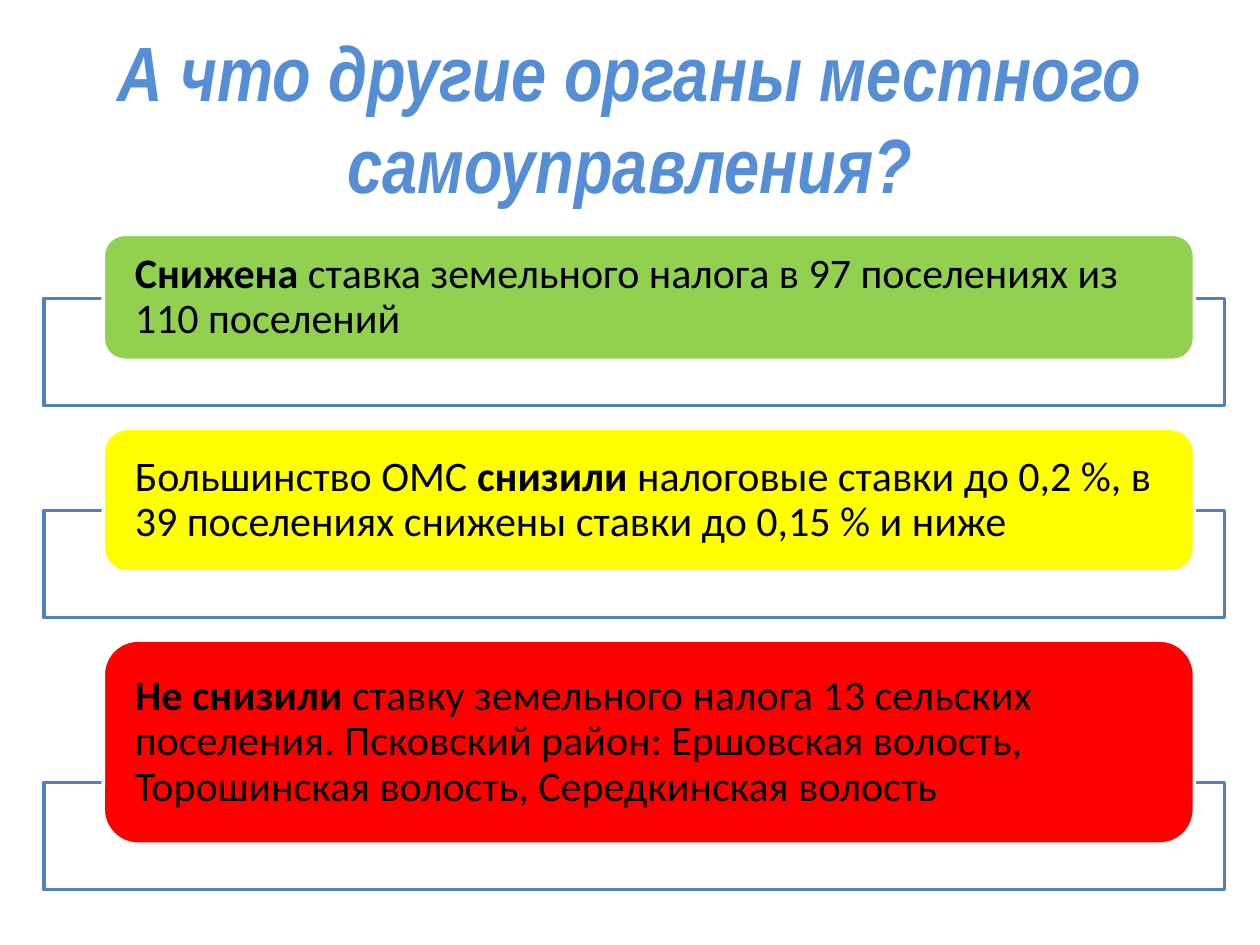
from dataclasses import dataclass

from pptx import Presentation
from pptx.dml.color import RGBColor
from pptx.enum.shapes import MSO_SHAPE as Shape
from pptx.enum.text import MSO_ANCHOR as Anchor, PP_ALIGN as Align
from pptx.util import Inches, Pt

TITLE = "А что другие органы местного самоуправления?"

# Each card: fill colour, height in inches, runs of (text, bold)
CARDS = [
    ("92D050", 1.0, [
        ("Снижена ", True),
        ("ставка земельного налога в 97 поселениях из 110 поселений", False),
    ]),
    ("FFFF00", 1.14, [
        ("Большинство ОМС ", False),
        ("снизили ", True),
        ("налоговые ставки до 0,2 %, в 39 поселениях снижены ставки до 0,15 % и ниже", False),
    ]),
    ("FF0000", 1.62, [
        ("Не снизили ", True),
        ("ставку земельного налога 13 сельских поселения. Псковский район: "
         "Ершовская волость, Торошинская волость, Середкинская волость", False),
    ]),
]


@dataclass(frozen=True)
class Theme:
    title: str = "558ED5"
    text: str = "000000"
    frame: str = "4F81BD"
    paper: str = "FFFFFF"
    title_font: str = "Arial Narrow"
    body_font: str = "Calibri"
    title_size: int = 44
    body_size: int = 24
    line_width: int = 2


THEME = Theme()
SLIDE_WIDTH, SLIDE_HEIGHT = 10, 7.5
FRAME_LEFT, FRAME_WIDTH, FRAME_HEIGHT = 0.35, 9.37, 0.85
CARD_LEFT, CARD_WIDTH, FIRST_TOP = 0.82, 8.66, 1.86
FRAME_DROP = 0.36   # how far a frame reaches below its card
CARD_GAP = 0.18     # from a frame to the next card
TEXT_INSET = 0.25
CORNER = 0.17       # corner radius as a share of the card height
CORNER_INSET = 0.29 * CORNER  # text inset caused by the rounding


def set_font(font, color, **values):
    font.color.rgb = RGBColor.from_string(color)
    for name, value in values.items():
        setattr(font, name, value)


def add_box(slide, kind, bounds, fill, line):
    shape = slide.shapes.add_shape(kind, *map(Inches, bounds))
    shape.shadow.inherit = False
    shape.fill.solid()
    shape.fill.fore_color.rgb = RGBColor.from_string(fill)
    shape.line.color.rgb = RGBColor.from_string(line)
    shape.line.width = Pt(THEME.line_width)
    return shape


def add_title(slide):
    title = slide.shapes.title
    bounds = dict(left=0.5, top=0.3, width=9, height=1.25)
    for name, value in bounds.items():
        setattr(title, name, Inches(value))
    frame = title.text_frame
    frame.word_wrap = True
    frame.vertical_anchor = Anchor.MIDDLE
    paragraph = frame.paragraphs[0]
    paragraph.alignment = Align.CENTER
    run = paragraph.add_run()
    run.text = TITLE
    set_font(run.font, THEME.title, name=THEME.title_font,
             size=Pt(THEME.title_size), bold=True, italic=True)


def write_card(card, height, runs):
    frame = card.text_frame
    side = Inches(TEXT_INSET - CORNER_INSET * height)
    layout = dict(word_wrap=True, vertical_anchor=Anchor.MIDDLE,
                  margin_left=side, margin_right=side,
                  margin_top=0, margin_bottom=0)
    for name, value in layout.items():
        setattr(frame, name, value)
    paragraph = frame.paragraphs[0]
    paragraph.alignment = Align.LEFT
    paragraph.line_spacing = 0.9
    for text, bold in runs:
        run = paragraph.add_run()
        run.text = text
        set_font(run.font, THEME.text, name=THEME.body_font,
                 size=Pt(THEME.body_size), bold=bold)


def add_cards(slide):
    top = FIRST_TOP
    for color, height, runs in CARDS:
        frame_bottom = top + height + FRAME_DROP
        add_box(slide, Shape.RECTANGLE,
                (FRAME_LEFT, frame_bottom - FRAME_HEIGHT, FRAME_WIDTH, FRAME_HEIGHT),
                THEME.paper, THEME.frame)
        card = add_box(slide, Shape.ROUNDED_RECTANGLE,
                       (CARD_LEFT, top, CARD_WIDTH, height), color, THEME.paper)
        card.adjustments[0] = CORNER
        write_card(card, height, runs)
        top = frame_bottom + CARD_GAP


def main():
    presentation = Presentation()
    presentation.slide_width = Inches(SLIDE_WIDTH)
    presentation.slide_height = Inches(SLIDE_HEIGHT)
    slide = presentation.slides.add_slide(presentation.slide_layouts.get_by_name("Title Only"))
    add_title(slide)
    add_cards(slide)
    presentation.save("out.pptx")


if __name__ == "__main__":
    main()
